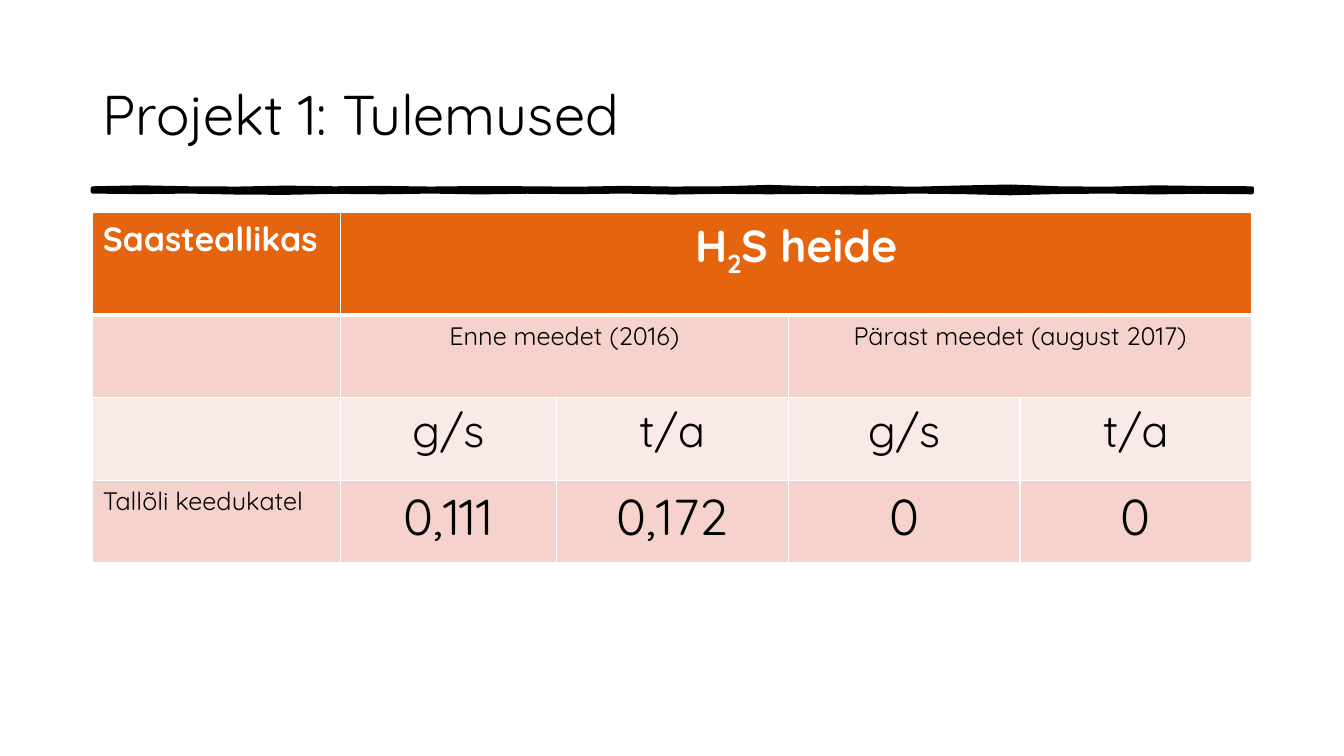
"""Build a slide with a title, a hand-drawn rule and a table of results."""
import dataclasses

import pptx
import pptx.dml.color
import pptx.enum.text
import pptx.oxml
import pptx.oxml.ns
import pptx.util

Pt = pptx.util.Pt
ALIGN = pptx.enum.text.PP_ALIGN
FONT = "Quicksand"
BLACK, WHITE = "000000", "FFFFFF"
LEFT, WIDTH = 66.24, 828
COLS = [177, 154.2, 165.6, 165.6, 165.6]
ROWS = [73, 59, 59, 59]
FILLS = ["E4650E", "F5D3CC", "FAEAE7", "F5D3CC"]
CREST = [0, -0.7, 0, 0.2, -0.5, 0, -0.3, 0.2, -0.2, 0, 0.3, -0.3,
         0.2, 0, -1, 0, -0.4, 0.3, -0.6, -1.3, 0, 0.3, -0.7, -0.2, 0]
TROUGH = [0, 0.4, 0, 0.7, 0.9, 0.2, 0.5, 0, 0.6, 0.1, 0.4, 0,
          0.7, 0.2, 0.5, 0.2, 0.8, 0, 0.4, 1.2, 0.3, 0, 0.6, 0.1, 0.5]


@dataclasses.dataclass
class Entry:
    row: int
    col: int
    text: str
    size: float
    span: int = 1
    align: ALIGN = ALIGN.CENTER


ENTRIES = [
    Entry(0, 0, "Saasteallikas", 24, align=ALIGN.LEFT),
    Entry(0, 1, "H_2_S heide", 32, span=4),
    Entry(1, 1, "Enne meedet (2016)", 18, span=2),
    Entry(1, 3, "Pärast meedet (august 2017)", 18, span=2),
    *[Entry(2, col, unit, 32)
      for col, unit in enumerate(["g/s", "t/a"] * 2, 1)],
    Entry(3, 0, "Tallõli keedukatel", 18, align=ALIGN.LEFT),
    *[Entry(3, col, value, 36)
      for col, value in enumerate(["0,111", "0,172", "0", "0"], 1)],
]


def paint(target, color: str) -> None:
    """Give a fill a solid colour."""
    target.solid()
    target.fore_color.rgb = pptx.dml.color.RGBColor.from_string(color)


def write(frame, text: str, size: float, color: str, bold: bool = False,
          align: ALIGN = ALIGN.LEFT) -> None:
    """Write one paragraph, with parts between underscores as subscript."""
    head, *rest = text.split("_")
    line = frame.paragraphs[0]
    line.text = head
    line.alignment = align
    for part in rest:
        line.add_run().text = part
    for index, run in enumerate(line.runs):
        run.font.name = FONT
        run.font.size = Pt(size)
        run.font.bold = bold
        paint(run.font.fill, color)
        if index % 2:
            run._r.get_or_add_rPr().set("baseline", "-25000")


def edge(cell, side: str, width: float) -> None:
    """Add a white border to one side of a cell."""
    space = pptx.oxml.ns.nsdecls("a")
    cell._tc.get_or_add_tcPr().append(pptx.oxml.parse_xml(
        f'<a:ln{side} {space} w="{Pt(width)}"><a:solidFill>'
        f'<a:srgbClr val="{WHITE}"/></a:solidFill></a:ln{side}>'))


def add_title(slide) -> None:
    """Add the heading."""
    box = slide.shapes.add_textbox(Pt(LEFT), Pt(28.8), Pt(WIDTH), Pt(104.4))
    frame = box.text_frame
    frame.word_wrap = True
    frame.vertical_anchor = pptx.enum.text.MSO_ANCHOR.MIDDLE
    write(frame, "Projekt 1: Tulemused", 40, BLACK)


def add_rule(slide) -> None:
    """Add the uneven stroke under the heading."""
    step = WIDTH / (len(CREST) - 1)
    top = [(LEFT + i * step, 134.6 + y) for i, y in enumerate(CREST)]
    base = [(LEFT + i * step, 136.8 + y) for i, y in enumerate(TROUGH)]
    ring = [(Pt(x), Pt(y)) for x, y in top + base[::-1]]
    pen = slide.shapes.build_freeform(*ring[0])
    pen.add_line_segments(ring[1:], close=True)
    rule = pen.convert_to_shape()
    rule.shadow.inherit = False
    paint(rule.fill, BLACK)
    paint(rule.line.fill, BLACK)
    rule.line.width = Pt(3)


def add_grid(slide) -> None:
    """Add the table of results."""
    grid = slide.shapes.add_table(
        len(ROWS), len(COLS), Pt(LEFT), Pt(152), Pt(WIDTH), Pt(sum(ROWS))).table
    for col, width in zip(grid.columns, COLS):
        col.width = Pt(width)
    for index, (row, height) in enumerate(zip(grid.rows, ROWS)):
        row.height = Pt(height)
        for cell in row.cells:
            for side in "LR":
                edge(cell, side, 1)
            edge(cell, "T", 3 if index == 1 else 1)
            edge(cell, "B", 3 if index == 0 else 1)
            paint(cell.fill, FILLS[index])
    for item in ENTRIES:
        cell = grid.cell(item.row, item.col)
        if item.span > 1:
            cell.merge(grid.cell(item.row, item.col + item.span - 1))
        top = item.row == 0
        write(cell.text_frame, item.text, item.size,
              WHITE if top else BLACK, top, item.align)


def main() -> None:
    """Build and save the slide."""
    deck = pptx.Presentation()
    deck.slide_width, deck.slide_height = Pt(960), Pt(540)
    slide = deck.slides.add_slide(deck.slide_layouts[6])
    add_rule(slide)
    add_title(slide)
    add_grid(slide)
    deck.save("out.pptx")


if __name__ == "__main__":
    main()
